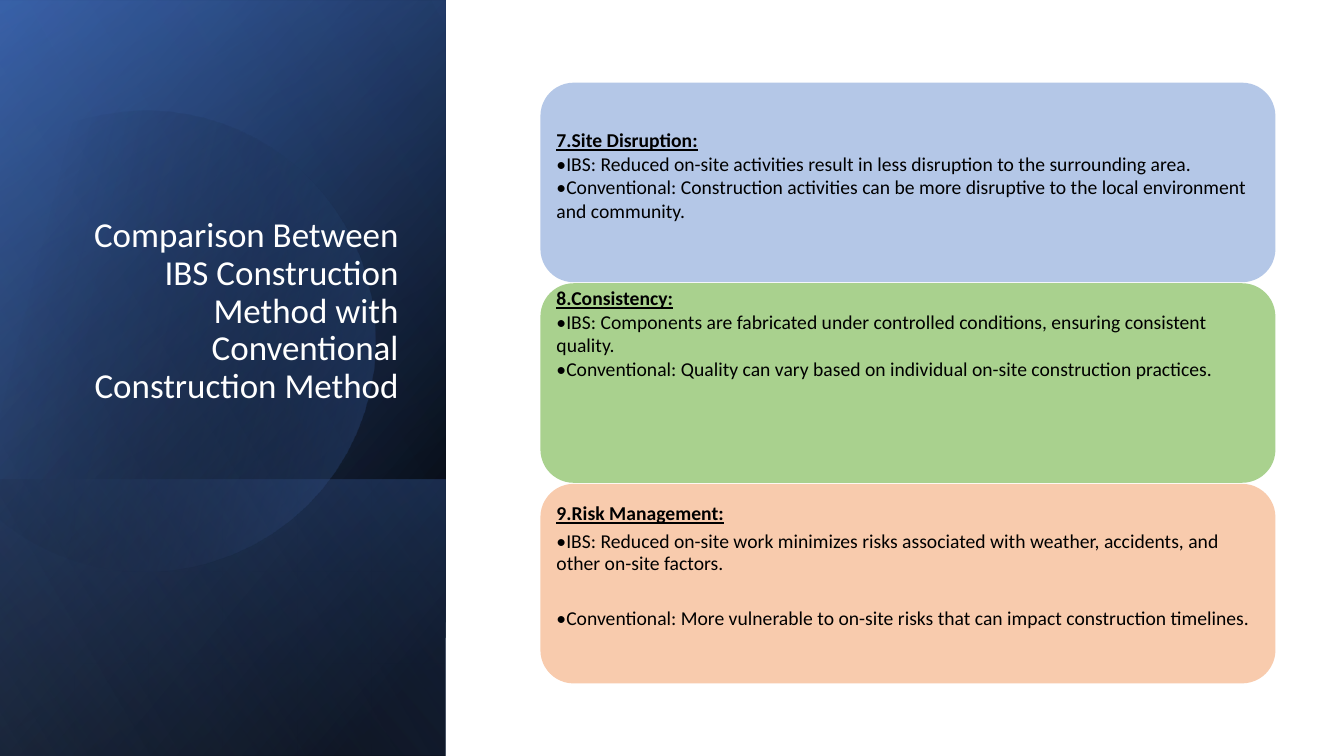
from math import cos, radians, sin
from lxml import etree
from pptx import Presentation
from pptx.dml.color import RGBColor
from pptx.enum.shapes import MSO_SHAPE
from pptx.enum.text import MSO_ANCHOR, PP_ALIGN
from pptx.oxml.ns import qn
from pptx.util import Inches, Pt

RECTANGLE = MSO_SHAPE.RECTANGLE
ROUNDED = MSO_SHAPE.ROUNDED_RECTANGLE
TOP, BOTTOM = MSO_ANCHOR.TOP, MSO_ANCHOR.BOTTOM
RIGHT = PP_ALIGN.RIGHT
FONT = "Calibri"


def color(value):
    return RGBColor.from_string(value)


def fill_gradient(shape, stops, angle):
    """Fill with (position %, colour, opacity %) stops and remove the outline."""
    shape.shadow.inherit = False
    shape.line.fill.background()
    shape.fill.gradient()
    gradient = shape._element.spPr.find(qn("a:gradFill"))
    for child in list(gradient):
        gradient.remove(child)
    gradient.set("rotWithShape", "1")
    stop_list = etree.SubElement(gradient, qn("a:gsLst"))
    for position, value, opacity in stops:
        stop = etree.SubElement(stop_list, qn("a:gs"), pos=str(position * 1000))
        stop_color = etree.SubElement(stop, qn("a:srgbClr"), val=value)
        if opacity < 100:
            etree.SubElement(stop_color, qn("a:alpha"), val=str(opacity * 1000))
    etree.SubElement(gradient, qn("a:lin"), ang=str(angle * 60000), scaled="0")


presentation = Presentation()
presentation.slide_width = Inches(13.33)
presentation.slide_height = Inches(7.5)
slide = presentation.slides.add_slide(presentation.slide_layouts[6])
shapes = slide.shapes

# Rounded glow outline: start point, curves (two controls and an end), left edge
glow_start = (1.49, 1.1)
glow_curves = [
    ((2.46, 1.12), (3.35, 1.77), (3.63, 2.75)),
    ((3.98, 3.97), (3.28, 5.23), (2.07, 5.58)),
    ((1.31, 5.8), (0.53, 5.61), (-0.03, 5.14)),
    ((-0.15, 5.03), (-0.15, 1.75), None),
    ((0, 1.61), None, None),
    ((0.23, 1.42), (0.5, 1.28), (0.8, 1.19)),
    ((1.03, 1.13), (1.26, 1.1), (1.49, 1.1)),
]
CURVE_STEPS = 16
glow_points = [glow_start]
for first, second, end in glow_curves:
    if end is None:
        glow_points += [point for point in (first, second) if point]
        continue
    start = glow_points[-1]
    for step in range(1, CURVE_STEPS + 1):
        t = step / CURVE_STEPS
        weights = ((1 - t) ** 3, 3 * t * (1 - t) ** 2, 3 * t * t * (1 - t), t ** 3)
        corners = (start, first, second, end)
        glow_points.append(tuple(sum(w * corner[axis] for w, corner in zip(weights, corners))
                                 for axis in (0, 1)))

# The outline is built upright and then turned by GLOW_TURN about its centre
GLOW_TURN = -16.1
center_x, center_y = 1.59, 3.35
cosine, sine = cos(radians(-GLOW_TURN)), sin(radians(-GLOW_TURN))
upright = [(Inches(center_x + (x - center_x) * cosine - (y - center_y) * sine),
            Inches(center_y + (x - center_x) * sine + (y - center_y) * cosine))
           for x, y in glow_points]

# Left side: layered gradients, with the glow below the last one
layers = [
    (-1.54, 1.54, 7.5, [(8, "000000", 100), (100, "2F5597", 100)], 50),
    (-1.54, 1.55, 7.5, [(0, "000000", 0), (99, "4472C4", 46)], 30),
    (0.84, 3.92, 2.74, [(2, "4472C4", 29), (100, "000000", 30)], 130),
    None,
    (-1.54, 1.54, 7.5, [(0, "000000", 0), (99, "8FAADC", 11)], 120),
]
for layer in layers:
    if layer is None:
        builder = shapes.build_freeform(*upright[0], scale=1.0)
        builder.add_line_segments(upright[1:], close=True)
        glow = builder.convert_to_shape()
        glow.rotation = GLOW_TURN
        fill_gradient(glow, [(29, "000000", 0), (100, "4472C4", 43)], 30)
        continue
    left, top, width, stops, angle = layer
    backdrop = shapes.add_shape(RECTANGLE, Inches(left), Inches(top), Inches(width), Inches(4.42))
    backdrop.rotation = 90
    backdrop._element.spPr.find(qn("a:xfrm")).set("flipH", "1")
    fill_gradient(backdrop, stops, angle)

# Title
title = shapes.add_textbox(Inches(0.64), Inches(1.84), Inches(3.41), Inches(2.62))
title_frame = title.text_frame
title_frame.word_wrap = True
title_frame.vertical_anchor = BOTTOM
title_frame.margin_bottom = Inches(0.43)
title_frame.text = "Comparison Between IBS Construction Method with Conventional Construction Method"
paragraph = title_frame.paragraphs[0]
paragraph.alignment = RIGHT
paragraph.line_spacing = 0.9
font = paragraph.runs[0].font
font.name, font.size = FONT, Pt(25)
font.color.rgb = color("FFFFFF")

# Comparison panels: fill, text offset, line spacing, space after each paragraph, lines
panels = [
    ("B4C7E7", 0.35, 1.0, (0, 0, 0), (
        "7.Site Disruption:",
        "•IBS: Reduced on-site activities result in less disruption to the surrounding area.",
        "•Conventional: Construction activities can be more disruptive to the local environment "
        "and community.")),
    ("A9D18E", -0.07, 1.0, (0, 0, 0), (
        "8.Consistency:",
        "•IBS: Components are fabricated under controlled conditions, ensuring consistent quality.",
        "•Conventional: Quality can vary based on individual on-site construction practices.")),
    ("F8CBAD", 0.1, 0.9, (4.8, 24.7, 0), (
        "9.Risk Management:",
        "•IBS: Reduced on-site work minimizes risks associated with weather, accidents, "
        "and other on-site factors.",
        "•Conventional: More vulnerable to on-site risks that can impact construction timelines.")),
]
for index, (fill, offset, line_spacing, gaps, lines) in enumerate(panels):
    top = 0.82 + 1.99 * index
    panel = shapes.add_shape(ROUNDED, Inches(5.36), Inches(top), Inches(7.29), Inches(1.98))
    panel.shadow.inherit = False
    panel.fill.solid()
    panel.fill.fore_color.rgb = color(fill)
    panel.line.fill.background()

    text_box = shapes.add_textbox(Inches(5.46), Inches(top + 0.1 + min(offset, 0)),
                                  Inches(7.1), Inches(1.79))
    text_frame = text_box.text_frame
    text_frame.word_wrap = True
    text_frame.vertical_anchor = TOP
    text_frame.margin_left = text_frame.margin_right = Inches(0.06)
    text_frame.margin_top, text_frame.margin_bottom = Inches(max(offset, 0)), Inches(0.06)
    text_frame.text = "\n".join(lines)
    for number, paragraph in enumerate(text_frame.paragraphs):
        paragraph.line_spacing = line_spacing
        paragraph.space_after = Pt(gaps[number])
        font = paragraph.runs[0].font
        font.name, font.size = FONT, Pt(14)
        font.color.rgb = color("000000")
        font.bold = font.underline = number == 0

presentation.save("out.pptx")
